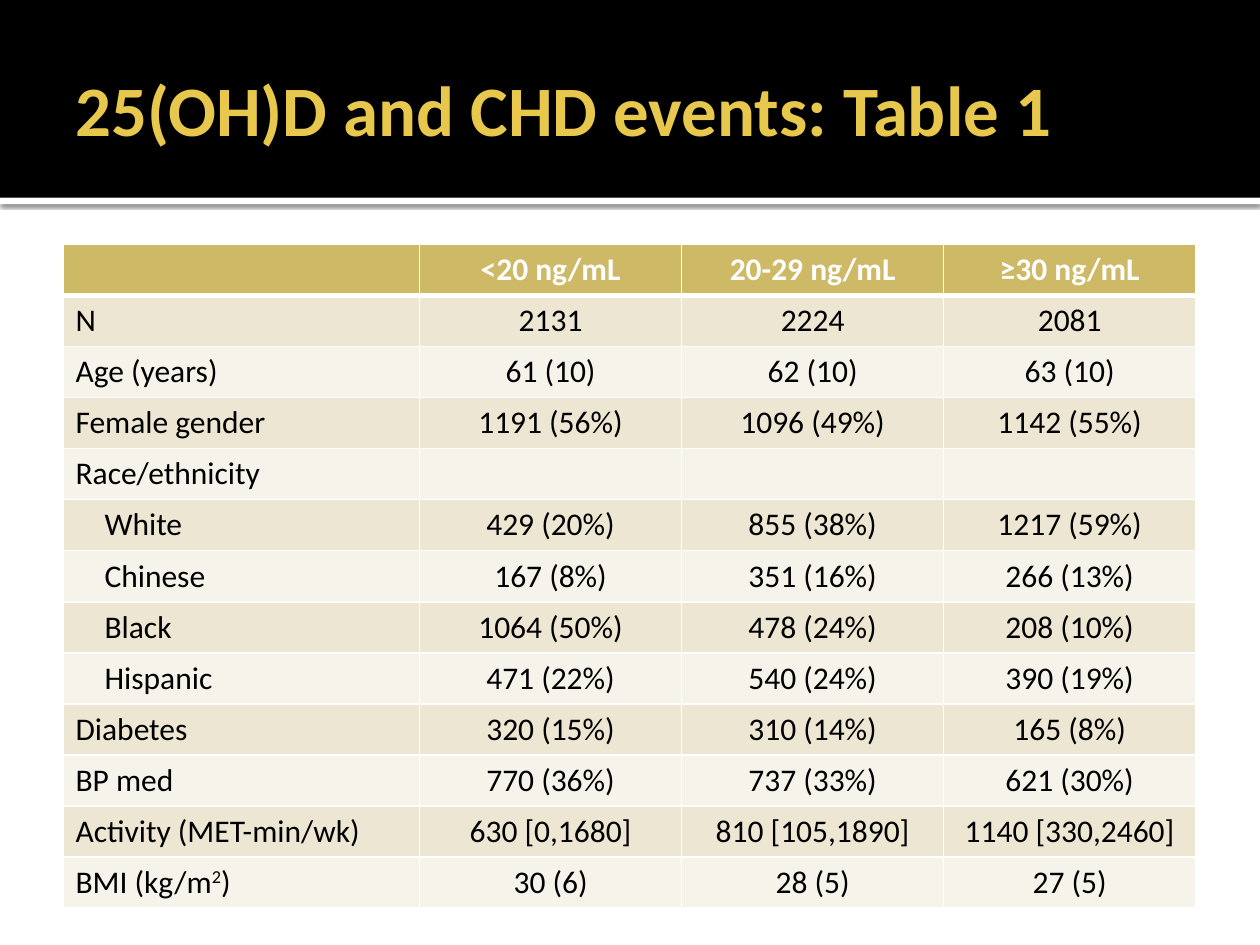
from lxml import etree
from pptx import Presentation
from pptx.dml.color import RGBColor
from pptx.enum.shapes import MSO_SHAPE
from pptx.enum.text import MSO_ANCHOR, PP_ALIGN
from pptx.oxml import parse_xml
from pptx.oxml.ns import nsdecls, qn
from pptx.util import Inches, Pt

RECTANGLE = MSO_SHAPE.RECTANGLE
MIDDLE = MSO_ANCHOR.MIDDLE
LEFT, CENTER = PP_ALIGN.LEFT, PP_ALIGN.CENTER
WHITE, BLACK, GOLD = "FFFFFF", "000000", "CEB966"
STRIPES = ["F6F3EA", "EDE6D3"]


def color(value):
    return RGBColor.from_string(value)


def add_run(paragraph, text, size, ink, bold):
    run = paragraph.add_run()
    run.text = text
    for name, value in {"name": "Calibri", "size": Pt(size), "bold": bold}.items():
        setattr(run.font, name, value)
    run.font.color.rgb = color(ink)
    return run


prs = Presentation()
prs.slide_width, prs.slide_height = Inches(10), Inches(7.5)
slide = prs.slides.add_slide(prs.slide_layouts[6])

for top, height, fill in [(1.57, 0.05, WHITE), (0, 1.57, BLACK)]:
    band = slide.shapes.add_shape(RECTANGLE, 0, Inches(top), Inches(10), Inches(height))
    band.shadow.inherit = False
    band.fill.solid()
    band.fill.fore_color.rgb = color(fill)
    band.line.fill.background()
    if fill == WHITE:
        band.element.spPr.find(qn("a:effectLst")).append(parse_xml(
            f'<a:outerShdw {nsdecls("a")} blurRad="{Pt(2.5)}" dist="{Pt(0.8)}" dir="5400000" '
            f'algn="t" rotWithShape="0"><a:srgbClr val="{BLACK}"><a:alpha val="60000"/>'
            '</a:srgbClr></a:outerShdw>'))

title = slide.shapes.add_textbox(Inches(0.5), Inches(0.17), Inches(9), Inches(1.37)).text_frame
title_format = {
    "word_wrap": True, "vertical_anchor": MIDDLE,
    "margin_left": Inches(0.1), "margin_right": Inches(0.05),
    "margin_top": Inches(0.05), "margin_bottom": Inches(0.05),
}
for name, value in title_format.items():
    setattr(title, name, value)
add_run(title.paragraphs[0], "25(OH)D and CHD events: Table 1", 40.5, "E8C84C", True)

characteristics = [
    ["", "<20 ng/mL", "20-29 ng/mL", "≥30 ng/mL"],
    ["N", "2131", "2224", "2081"],
    ["Age (years)", "61 (10)", "62 (10)", "63 (10)"],
    ["Female gender", "1191 (56%)", "1096 (49%)", "1142 (55%)"],
    ["Race/ethnicity", "", "", ""],
    ["White", "429 (20%)", "855 (38%)", "1217 (59%)"],
    ["Chinese", "167 (8%)", "351 (16%)", "266 (13%)"],
    ["Black", "1064 (50%)", "478 (24%)", "208 (10%)"],
    ["Hispanic", "471 (22%)", "540 (24%)", "390 (19%)"],
    ["Diabetes", "320 (15%)", "310 (14%)", "165 (8%)"],
    ["BP med", "770 (36%)", "737 (33%)", "621 (30%)"],
    ["Activity (MET-min/wk)", "630 [0,1680]", "810 [105,1890]", "1140 [330,2460]"],
    ["BMI (kg/m²)", "30 (6)", "28 (5)", "27 (5)"],
]
ethnicities = ["White", "Chinese", "Black", "Hispanic"]

table = slide.shapes.add_table(
    len(characteristics), 4, Inches(0.5), Inches(1.94), Inches(9), Inches(5.27)).table
for column, width in zip(table.columns, [2.83, 2.08, 2.08, 2]):
    column.width = Inches(width)

for r, row in enumerate(characteristics):
    header = r == 0
    for c, text in enumerate(row):
        cell = table.cell(r, c)
        cell.fill.solid()
        cell.fill.fore_color.rgb = color(GOLD if header else STRIPES[r % 2])
        cell.margin_left = Inches(0.33 if text in ethnicities else 0.1)

        paragraph = cell.text_frame.paragraphs[0]
        paragraph.alignment = CENTER if c else LEFT
        before, square, after = text.partition("²")
        for part, raised in [(before, False), (square and "2", True), (after, False)]:
            if part:
                run = add_run(paragraph, part, 18, WHITE if header else BLACK, header)
                if raised:
                    run.font._element.set("baseline", "30000")

        borders = {"lnL": 1, "lnR": 1, "lnT": 3 if r == 1 else 1, "lnB": 3 if header else 1}
        properties = cell._tc.get_or_add_tcPr()
        for position, (side, width) in enumerate(borders.items()):
            border = etree.Element(qn(f"a:{side}"), w=str(Pt(width)))
            ink = etree.SubElement(border, qn("a:solidFill"))
            etree.SubElement(ink, qn("a:srgbClr"), val=WHITE)
            properties.insert(position, border)

prs.save("out.pptx")
